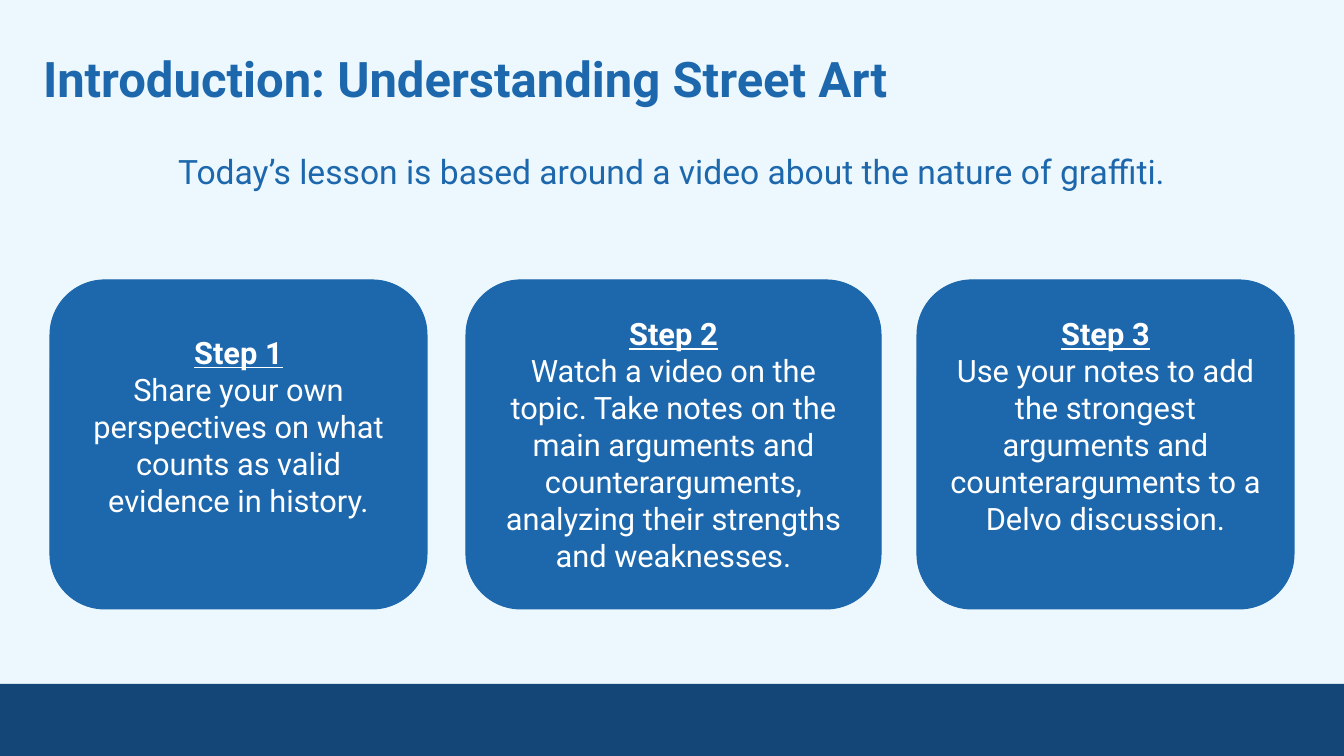
"""Build the lesson introduction slide with its three step cards."""
from pptx import Presentation
from pptx.dml.color import RGBColor
from pptx.enum.shapes import MSO_SHAPE as Shape
from pptx.enum.text import MSO_ANCHOR as Anchor, MSO_AUTO_SIZE as AutoSize, PP_ALIGN as Align
from pptx.util import Pt

PX = 9071
FONT = "Roboto"
PALE = RGBColor(0xEC, 0xF8, 0xFE)
BLUE = RGBColor(0x1D, 0x67, 0xAC)
NAVY = RGBColor(0x14, 0x47, 0x77)
WHITE = RGBColor(0xFF, 0xFF, 0xFF)


def style(paragraph, size, color, align, bold=False):
    paragraph.alignment = align
    font = paragraph.font
    font.name, font.size, font.bold = FONT, Pt(size), bold
    font.color.rgb = color


def set_frame(frame, inset, anchor):
    frame.word_wrap = True
    frame.auto_size = AutoSize.NONE
    frame.vertical_anchor = anchor
    frame.margin_left = frame.margin_right = inset * PX
    frame.margin_top = frame.margin_bottom = inset * PX


prs = Presentation()
prs.slide_width, prs.slide_height = 1344 * PX, 756 * PX
slide = prs.slides.add_slide(prs.slide_layouts[5])
slide.background.fill.solid()
slide.background.fill.fore_color.rgb = PALE

footer = slide.shapes.add_shape(Shape.RECTANGLE, 0, 684 * PX, 1344 * PX, 72 * PX)
footer.shadow.inherit = False
footer.fill.solid()
footer.fill.fore_color.rgb = NAVY
footer.line.fill.background()

title = slide.shapes.title
title.left, title.top, title.width, title.height = 30 * PX, 35 * PX, 1229 * PX, 87 * PX
title.text_frame.text = "Introduction: Understanding Street Art"
set_frame(title.text_frame, 13, Anchor.TOP)
style(title.text_frame.paragraphs[0], 35, BLUE, Align.LEFT, bold=True)

summary = slide.shapes.add_textbox(57 * PX, 141 * PX, 1229 * PX, 102 * PX).text_frame
summary.text = "Today’s lesson is based around a video about the nature of graffiti."
set_frame(summary, 10, Anchor.TOP)
style(summary.paragraphs[0], 24, BLUE, Align.CENTER)

STEPS = [
    (50, 377, 47, "Share your own perspectives on what counts as valid evidence in history."),
    (466, 415, 10, "Watch a video on the topic. Take notes on the main arguments and "
                   "counterarguments, analyzing their strengths and weaknesses."),
    (917, 377, 47, "Use your notes to add the strongest arguments and counterarguments "
                   "to a Delvo discussion."),
]
for number, (left, width, bottom_inset, task) in enumerate(STEPS, 1):
    card = slide.shapes.add_shape(Shape.ROUNDED_RECTANGLE, left * PX, 280 * PX, width * PX, 329 * PX)
    card.shadow.inherit = False
    card.fill.solid()
    card.fill.fore_color.rgb = BLUE
    card.line.color.rgb = BLUE
    card.line.width = Pt(0.75)
    frame = card.text_frame
    set_frame(frame, 10, Anchor.MIDDLE)
    frame.margin_bottom = bottom_inset * PX
    frame.text = f"Step {number}\n{task}"
    heading, instruction = frame.paragraphs
    style(heading, 22, WHITE, Align.CENTER, bold=True)
    heading.font.underline = True
    style(instruction, 22, WHITE, Align.CENTER)

prs.save("out.pptx")
